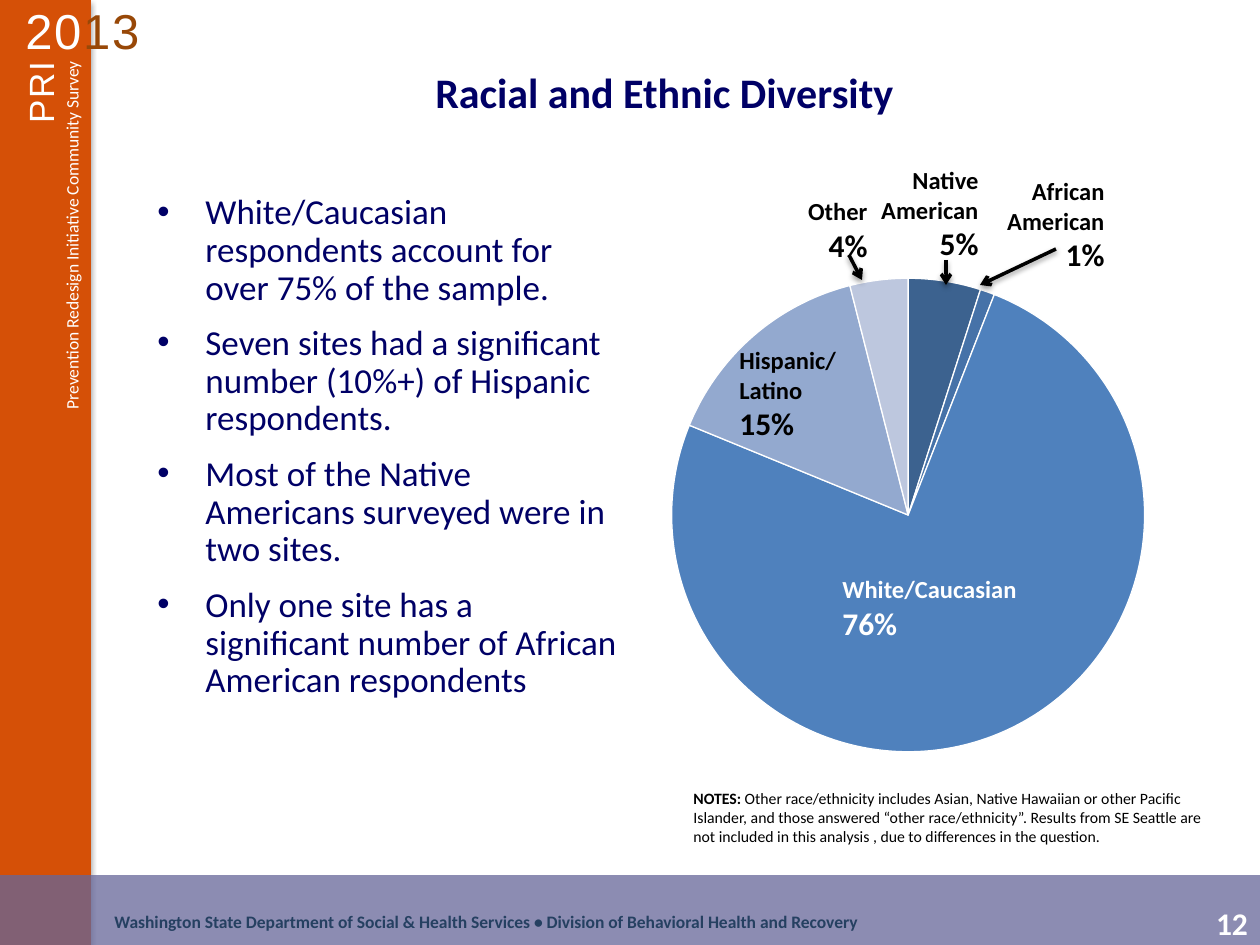
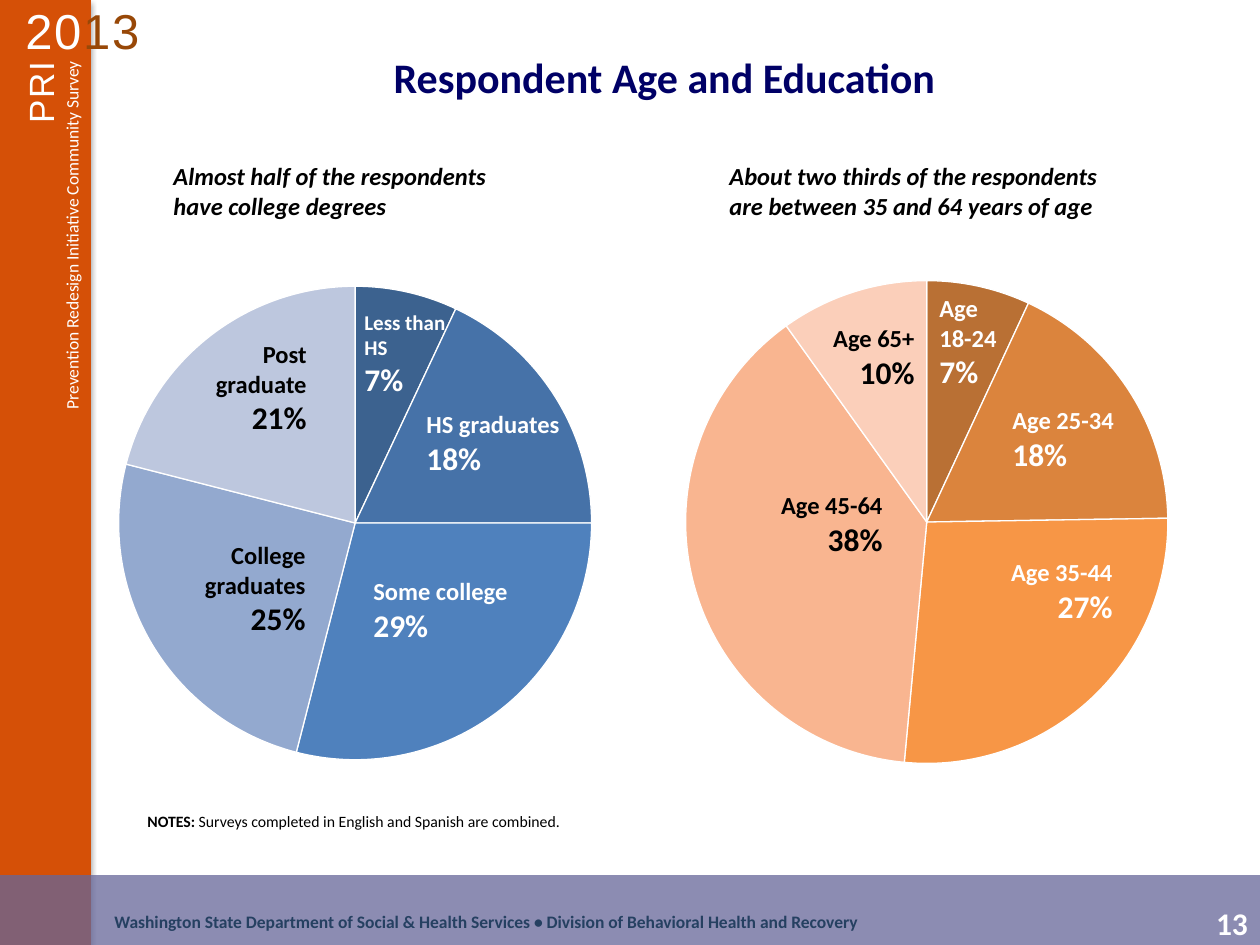
from typing import NamedTuple

from lxml.etree import SubElement
from pptx import Presentation
from pptx.chart.data import CategoryChartData
from pptx.dml.color import RGBColor
from pptx.enum.chart import XL_CHART_TYPE
from pptx.enum.shapes import MSO_CONNECTOR, MSO_SHAPE
from pptx.enum.text import PP_ALIGN
from pptx.oxml import parse_xml
from pptx.oxml.ns import nsdecls, qn
from pptx.util import Emu, Pt

PX_PER_INCH = 126
WHITE, BLACK, NAVY = "FFFFFF", "000000", "000066"
ORANGE, BROWN, SLATE, DARK_BLUE = "D55007", "984807", "666699", "254061"
BLUES = ("3C628F", "4672A8", "4F81BD", "93A9CF", "BDC7DE")
ORANGES = ("B97034", "DB843D", "F79646", "F9B590", "FBCFBA")
LEFT, CENTER, RIGHT = PP_ALIGN.LEFT, PP_ALIGN.CENTER, PP_ALIGN.RIGHT


class Frame(NamedTuple):
    """Place and size in px."""
    left: int
    top: int
    width: int
    height: int


class Span(NamedTuple):
    """Text in one style."""
    text: str
    size: int
    color: str = BLACK
    bold: bool = False
    italic: bool = False
    font: str = "Calibri"
    spacing: int = 0


class Label(NamedTuple):
    """Name and percentage of a pie slice."""
    frame: Frame
    names: tuple[str, ...]
    share: str
    color: str = BLACK
    align: PP_ALIGN = LEFT
    size: int = 14


class Pie(NamedTuple):
    """Pie chart with its slice labels."""
    frame: Frame
    values: tuple[int, ...]
    colors: tuple[str, ...]
    labels: tuple[Label, ...]


class Arrow(NamedTuple):
    """Pointer from a label to its slice, in px."""
    begin_x: int
    begin_y: int
    end_x: int
    end_y: int


def px(length: int) -> Emu:
    """Turn px into EMU."""
    return Emu(round(length * 914400 / PX_PER_INCH))


def place(frame: Frame) -> list[Emu]:
    """Turn a frame into EMU arguments."""
    return [px(length) for length in frame]


def rgb(color: str) -> RGBColor:
    """Read a hex colour."""
    return RGBColor.from_string(color)


def add_shadow(shape, opacity: int) -> None:
    """Add a soft shadow below a shape or line."""
    effects = SubElement(shape._element.spPr, qn("a:effectLst"))
    effects.append(parse_xml(
        f'<a:outerShdw {nsdecls("a")} blurRad="39370" dist="22860" dir="5400000" rotWithShape="0">'
        f'<a:srgbClr val="{BLACK}"><a:alpha val="{opacity * 1000}"/></a:srgbClr></a:outerShdw>'))


def style(run, span: Span) -> None:
    """Format a run."""
    run.font.name = span.font
    run.font.size = Pt(span.size)
    run.font.bold = span.bold
    run.font.italic = span.italic
    run.font.color.rgb = rgb(span.color)
    if span.spacing:
        run.font._element.set("spc", str(span.spacing * 100))


def add_text(page, frame: Frame, rows: list[list[Span]], align: PP_ALIGN = LEFT, rotation: int = 0):
    """Add a text box with one paragraph for each row."""
    box = page.shapes.add_textbox(*place(frame))
    box.rotation = rotation
    box.text_frame.word_wrap = True
    box.text_frame.text = "\n".join("" for _ in rows)
    for para, row in zip(box.text_frame.paragraphs, rows):
        para.alignment = align
        for span in row:
            run = para.add_run()
            run.text = span.text
            style(run, span)
    return box


def add_band(page, frame: Frame, color: str):
    """Add a plain filled rectangle."""
    band = page.shapes.add_shape(MSO_SHAPE.RECTANGLE, *place(frame))
    band.fill.solid()
    band.fill.fore_color.rgb = rgb(color)
    band.line.fill.background()
    return band


def add_page(deck, number: int, title: str, title_top: int):
    """Add a page with the bands, side titles, footer and title."""
    page = deck.slides.add_slide(deck.slide_layouts[6])
    add_shadow(add_band(page, Frame(0, 0, 91, 945), ORANGE), 35)
    footer = add_band(page, Frame(0, 875, 1260, 70), SLATE)
    footer.shadow.inherit = False
    color = footer._element.spPr.find(qn("a:solidFill")).find(qn("a:srgbClr"))
    SubElement(color, qn("a:alpha")).set("val", "75000")
    add_text(page, Frame(1190, 898, 84, 50), [[Span(str(number), 18, WHITE, True)]], CENTER)
    add_text(page, Frame(102, 905, 1152, 34), [[Span(
        "Washington State Department of Social & Health Services • "
        "Division of Behavioral Health and Recovery", 10, DARK_BLUE, True)]])
    add_text(page, Frame(13, -6, 174, 72), [[
        Span("20", 28, WHITE, font="Arial", spacing=1),
        Span("13", 28, BROWN, font="Arial", spacing=1)]])
    add_text(page, Frame(-120, 224, 384, 34), [[
        Span("Prevention Redesign Initiative Community Survey", 10, WHITE)]], RIGHT, 270)
    add_text(page, Frame(-296, 358, 673, 55), [[
        Span("PRI", 20, WHITE, font="Arial", spacing=1)]], RIGHT, 270)
    add_text(page, Frame(117, title_top, 1095, 63), [[Span(title, 24, NAVY, True)]], CENTER)
    return page


def add_bullets(page, frame: Frame, points: tuple[str, ...]) -> None:
    """Add the bulleted statements."""
    box = add_text(page, frame, [[Span(point, 20, NAVY)] for point in points])
    for index, para in enumerate(box.text_frame.paragraphs):
        properties = para._p.get_or_add_pPr()
        properties.set("marL", str(px(75)))
        properties.set("indent", str(px(-48)))
        SubElement(properties, qn("a:buFont")).set("typeface", "Arial")
        SubElement(properties, qn("a:buChar")).set("char", "•")
        para.line_spacing = 0.9
        para.space_before = Pt(4 if index else 0)
        para.space_after = Pt(6)


def add_pie(page, pie: Pie) -> None:
    """Add a pie chart and its labels."""
    data = CategoryChartData()
    data.categories = [str(index + 1) for index in range(len(pie.values))]
    data.add_series("Series 1", pie.values)
    chart = page.shapes.add_chart(XL_CHART_TYPE.PIE, *place(pie.frame), data).chart
    chart.has_legend = False
    chart.has_title = False
    chart.font.name = "Calibri"
    chart.font.size = Pt(18)
    chart.font.color.rgb = rgb(BLACK)
    plot = chart.plots[0]
    plot.vary_by_categories = True
    for index, color in enumerate(pie.colors):
        slice_format = plot.series[0].points[index].format
        slice_format.fill.solid()
        slice_format.fill.fore_color.rgb = rgb(color)
        slice_format.line.color.rgb = rgb(WHITE)
        slice_format.line.width = Pt(0.75)
    area = chart._chartSpace.chart.plotArea
    for old_layout in area.findall(qn("c:layout")):
        area.remove(old_layout)
    area.insert(0, parse_xml(
        f'<c:layout {nsdecls("c")}><c:manualLayout><c:layoutTarget val="inner"/>'
        '<c:xMode val="edge"/><c:yMode val="edge"/><c:x val="0"/><c:y val="0"/>'
        '<c:w val="0.925"/><c:h val="0.952"/></c:manualLayout></c:layout>'))
    for label in pie.labels:
        rows = [[Span(name, label.size, label.color, True)] for name in label.names]
        rows.append([Span(label.share, 18, label.color, True)])
        add_text(page, label.frame, rows, label.align)


def add_arrow(page, arrow: Arrow) -> None:
    """Add a black arrow."""
    line = page.shapes.add_connector(MSO_CONNECTOR.STRAIGHT, *[px(length) for length in arrow])
    line.line.color.rgb = rgb(BLACK)
    line.line.width = Pt(2)
    outline = line._element.spPr.find(qn("a:ln"))
    SubElement(outline, qn("a:tailEnd")).set("type", "arrow")
    add_shadow(line, 38)


def add_notes_line(page, frame: Frame, text: str) -> None:
    """Add the small remark under the charts."""
    add_text(page, frame, [[Span("NOTES: ", 9, bold=True), Span(text, 9)]])


DIVERSITY_POINTS = (
    "White/Caucasian respondents account for over 75% of the sample.",
    "Seven sites had a significant number (10%+) of Hispanic respondents.",
    "Most of the Native Americans surveyed were in two sites.",
    "Only one site has a significant number of African American respondents",
)
DIVERSITY = Pie(Frame(671, 249, 512, 559), (5, 1, 76, 15, 4), BLUES, (
    Label(Frame(830, 568, 212, 81), ("White/Caucasian",), "76%", WHITE),
    Label(Frame(858, 159, 133, 111), ("Native American",), "5%", align=RIGHT),
    Label(Frame(984, 170, 133, 111), ("African American",), "1%", align=RIGHT),
    Label(Frame(727, 339, 136, 111), ("Hispanic/ Latino",), "15%"),
    Label(Frame(751, 190, 129, 81), ("Other",), "4%", align=RIGHT),
))
DIVERSITY_ARROWS = (
    Arrow(946, 260, 946, 285),
    Arrow(1056, 249, 980, 285),
    Arrow(849, 255, 862, 280),
)
EDUCATION = Pie(Frame(118, 257, 512, 559), (7, 18, 29, 25, 21), BLUES, (
    Label(Frame(352, 303, 123, 102), ("Less than", "HS"), "7%", WHITE, size=12),
    Label(Frame(414, 403, 192, 81), ("HS graduates",), "18%", WHITE),
    Label(Frame(126, 534, 192, 111), ("College graduates",), "25%", align=RIGHT),
    Label(Frame(161, 333, 158, 111), ("Post graduate",), "21%", align=RIGHT),
    Label(Frame(361, 570, 192, 81), ("Some college",), "29%", WHITE),
))
AGE = Pie(Frame(685, 256, 522, 559), (7, 18, 27, 39, 10), ORANGES, (
    Label(Frame(927, 287, 123, 111), ("Age", "18-24"), "7%", WHITE),
    Label(Frame(1000, 399, 150, 81), ("Age 25-34",), "18%", WHITE),
    Label(Frame(986, 551, 139, 81), ("Age 35-44",), "27%", WHITE, RIGHT),
    Label(Frame(703, 484, 192, 81), ("Age 45-64",), "38%", align=RIGHT),
    Label(Frame(798, 317, 129, 81), ("Age 65+",), "10%", align=RIGHT),
))
CAPTIONS = (
    (Frame(161, 155, 382, 72), "Almost half of the respondents have college degrees"),
    (Frame(717, 155, 425, 72),
     "About two thirds of the respondents are between 35 and 64 years of age"),
)


def build_diversity(deck) -> None:
    """Build the race and ethnicity page."""
    page = add_page(deck, 12, "Racial and Ethnic Diversity", 60)
    add_bullets(page, Frame(118, 188, 518, 664), DIVERSITY_POINTS)
    add_pie(page, DIVERSITY)
    for arrow in DIVERSITY_ARROWS:
        add_arrow(page, arrow)
    add_notes_line(page, Frame(681, 783, 546, 71), (
        "Other race/ethnicity includes Asian, Native Hawaiian or other Pacific Islander, "
        "and those answered “other race/ethnicity”. Results from SE Seattle are not "
        "included in this analysis , due to differences in the question."))


def build_age_and_education(deck) -> None:
    """Build the age and education page."""
    page = add_page(deck, 13, "Respondent Age and Education", 45)
    for pie in (EDUCATION, AGE):
        add_pie(page, pie)
    for frame, text in CAPTIONS:
        add_text(page, frame, [[Span(text, 14, bold=True, italic=True)]])
    add_notes_line(page, Frame(135, 806, 1091, 32),
                   "Surveys completed in English and Spanish are combined.")


def main() -> None:
    """Build and save the deck."""
    deck = Presentation()
    deck.slide_width, deck.slide_height = px(1260), px(945)
    build_diversity(deck)
    build_age_and_education(deck)
    deck.save("out.pptx")


if __name__ == "__main__":
    main()
